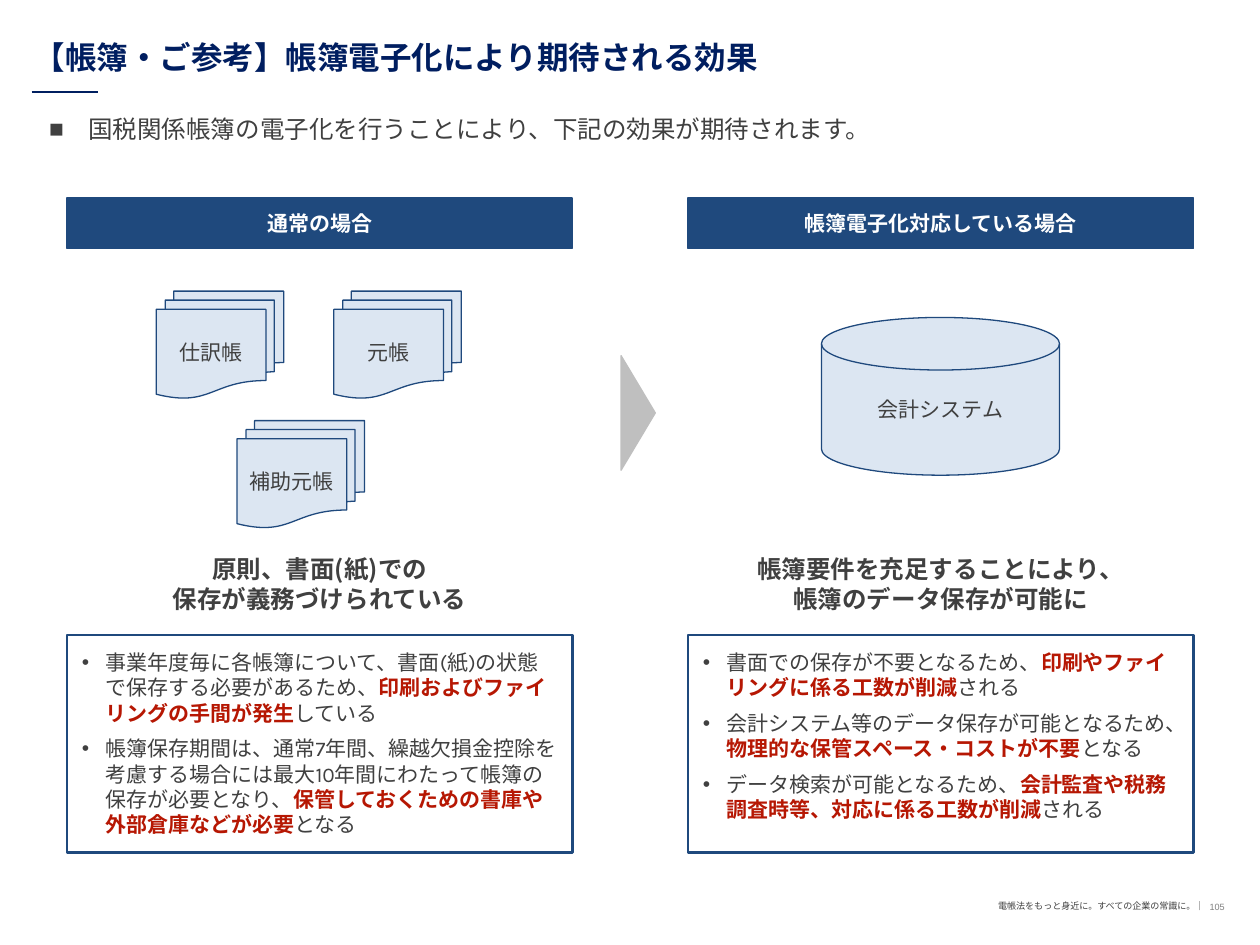
from pptx import Presentation
from pptx.dml.color import RGBColor
from pptx.enum.shapes import MSO_CONNECTOR, MSO_SHAPE
from pptx.enum.text import MSO_ANCHOR, MSO_AUTO_SIZE, PP_ALIGN
from pptx.oxml.ns import qn
from pptx.util import Cm, Pt
from lxml import etree

LEFT, CENTER, RIGHT = PP_ALIGN.LEFT, PP_ALIGN.CENTER, PP_ALIGN.RIGHT
TOP, MIDDLE = MSO_ANCHOR.TOP, MSO_ANCHOR.MIDDLE
RECT, TRIANGLE = MSO_SHAPE.RECTANGLE, MSO_SHAPE.ISOSCELES_TRIANGLE
DOCS, DISK = MSO_SHAPE.FLOWCHART_MULTIDOCUMENT, MSO_SHAPE.FLOWCHART_MAGNETIC_DISK
STRAIGHT = MSO_CONNECTOR.STRAIGHT
NO_FIT = MSO_AUTO_SIZE.NONE

CJK, LATIN, ARIAL = "Noto Sans CJK JP", "Karla", "Arial"
NAVY, RULE, BLUE, PALE = "001E60", "001F60", "1F497D", "DCE6F2"
TEXT, RED, WHITE, GREY, SILVER = "404040", "B61703", "FFFFFF", "808080", "BFBFBF"


def rgb(value):
    return RGBColor.from_string(value)


class SlideBuilder:
    def __init__(self, prs):
        self.slide = prs.slides.add_slide(prs.slide_layouts[5])

    def run(self, p, text, size, color=TEXT, bold=False, font=CJK):
        r = p.add_run()
        r.text = text
        r.font.size = Pt(size)
        r.font.bold = bold
        r.font.color.rgb = rgb(color)
        r.font.name = font
        rPr = r.font._element
        rPr.set("lang", "ja-JP")
        etree.SubElement(rPr, qn("a:ea")).set("typeface", LATIN)

    def bullet(self, p, char, indent):
        pPr = p._p.get_or_add_pPr()
        pPr.set("marL", str(Cm(indent)))
        pPr.set("indent", str(-Cm(indent)))
        etree.SubElement(pPr, qn("a:buFont")).set("typeface", ARIAL)
        etree.SubElement(pPr, qn("a:buChar")).set("char", char)

    def frame(self, sp, anchor=TOP, wrap=True):
        tf = sp.text_frame
        tf.auto_size = NO_FIT
        tf.word_wrap = wrap
        tf.vertical_anchor = anchor
        return tf

    def title(self, x, y, w, h, text):
        sp = self.slide.shapes.title
        sp.left, sp.top, sp.width, sp.height = Cm(x), Cm(y), Cm(w), Cm(h)
        p = self.frame(sp).paragraphs[0]
        p.alignment = LEFT
        self.run(p, text, 18, NAVY, True)

    def text(self, x, y, w, h, lines, size, align=LEFT, anchor=TOP, **style):
        sp = self.slide.shapes.add_textbox(Cm(x), Cm(y), Cm(w), Cm(h))
        tf = self.frame(sp, anchor)
        for i, line in enumerate(lines):
            p = tf.add_paragraph() if i else tf.paragraphs[0]
            p.alignment = align
            self.run(p, line, size, **style)
        return tf

    def shape(self, kind, x, y, w, h, fill, line, weight, label="", **style):
        sp = self.slide.shapes.add_shape(kind, Cm(x), Cm(y), Cm(w), Cm(h))
        sp.shadow.inherit = False
        if fill:
            sp.fill.solid()
            sp.fill.fore_color.rgb = rgb(fill)
        else:
            sp.fill.background()
        sp.line.color.rgb = rgb(line)
        sp.line.width = Pt(weight)
        if label:
            p = self.frame(sp, MIDDLE, False).paragraphs[0]
            p.alignment = CENTER
            self.run(p, label, 12, **style)
        return sp

    def points(self, x, y, w, h, items):
        tf = self.frame(self.shape(RECT, x, y, w, h, None, BLUE, 1.5))
        tf.margin_left = tf.margin_right = tf.margin_top = tf.margin_bottom = Cm(0.3)
        for i, item in enumerate(items):
            p = tf.add_paragraph() if i else tf.paragraphs[0]
            p.alignment = LEFT
            if i:
                p.space_before = Pt(6)
            self.bullet(p, "•", 0.48)
            before, strong, after = item
            self.run(p, before, 12, font=LATIN)
            for text, font in strong:
                self.run(p, text, 12, RED, True, font)
            self.run(p, after, 12, font=LATIN)

    def rule(self, x1, x2, y):
        ln = self.slide.shapes.add_connector(STRAIGHT, Cm(x1), Cm(y), Cm(x2), Cm(y))
        ln.line.color.rgb = rgb(RULE)
        ln.line.width = Pt(1)
        etree.SubElement(ln._element.spPr, qn("a:effectLst"))


COLUMNS = [
    (1.35, "通常の場合", ["原則、書面(紙)での", "保存が義務づけられている"], [
        ("事業年度毎に各帳簿について、書面(紙)の状態で保存する必要があるため、",
         [("印刷およびファイリングの手間が発生", LATIN)], "している"),
        ("帳簿保存期間は、通常7年間、繰越欠損金控除を考慮する場合には最大10年間にわたって帳簿の保存が必要となり、",
         [("保管しておくための書庫や外部倉庫などが必要", LATIN)], "となる"),
    ]),
    (13.87, "帳簿電子化対応している場合",
     ["帳簿要件を充足することにより、", "帳簿のデータ保存が可能に"], [
        ("書面での保存が不要となるため、",
         [("印刷やファイリングに係る工数が削減", LATIN)], "される"),
        ("会計システム等のデータ保存が可能となるため、",
         [("物理的な保管スペース・コストが不要", LATIN)], "となる"),
        ("データ検索が可能となるため、",
         [("会計監査や税務調査時等、", ARIAL), ("対応に係る工数が削減", LATIN)], "される"),
    ]),
]
LEDGERS = [(3.15, 5.87, "仕訳帳"), (6.73, 5.87, "元帳"), (4.78, 8.48, "補助元帳")]
COLUMN_W = 10.19


def main():
    prs = Presentation()
    prs.slide_width, prs.slide_height = Cm(25.4), Cm(19.05)
    s = SlideBuilder(prs)

    s.title(0.43, 0.64, 24.97, 1.24, "【帳簿・ご参考】帳簿電子化により期待される効果")
    s.rule(0.64, 1.98, 1.85)
    lead = s.text(0.74, 2.18, 24.46, 1.45,
                  ["国税関係帳簿の電子化を行うことにより、下記の効果が期待されます。"], 14)
    s.bullet(lead.paragraphs[0], "■", 0.79)

    for x, y, name in LEDGERS:
        s.shape(DOCS, x, y, 2.57, 2.16, PALE, BLUE, 0.75, name)
    s.shape(DISK, 16.56, 6.4, 4.8, 3.18, PALE, BLUE, 0.75, "会計システム")
    arrow = s.shape(TRIANGLE, 11.71, 7.98, 2.31, 0.69, SILVER, SILVER, 0.75)
    arrow.rotation = 90

    for x, header, summary, items in COLUMNS:
        s.shape(RECT, x, 3.99, COLUMN_W, 1.02, BLUE, BLUE, 1, header,
                color=WHITE, bold=True, font=LATIN)
        s.text(x, 11.05, COLUMN_W, 1.45, summary, 14, CENTER, bold=True)
        s.points(x, 12.8, COLUMN_W, 4.39, items)

    s.text(19.71, 18.03, 4.83, 0.48,
           ["電帳法をもっと身近に。すべての企業の常識に。｜"], 5.2, RIGHT)
    number = s.text(23.65, 17.98, 1.42, 0.61, ["105"], 5.2, RIGHT, MIDDLE,
                    color=GREY, font=ARIAL)
    number.margin_left = number.margin_top = number.margin_bottom = 0
    number.margin_right = Cm(0.38)

    prs.save("out.pptx")


if __name__ == "__main__":
    main()
